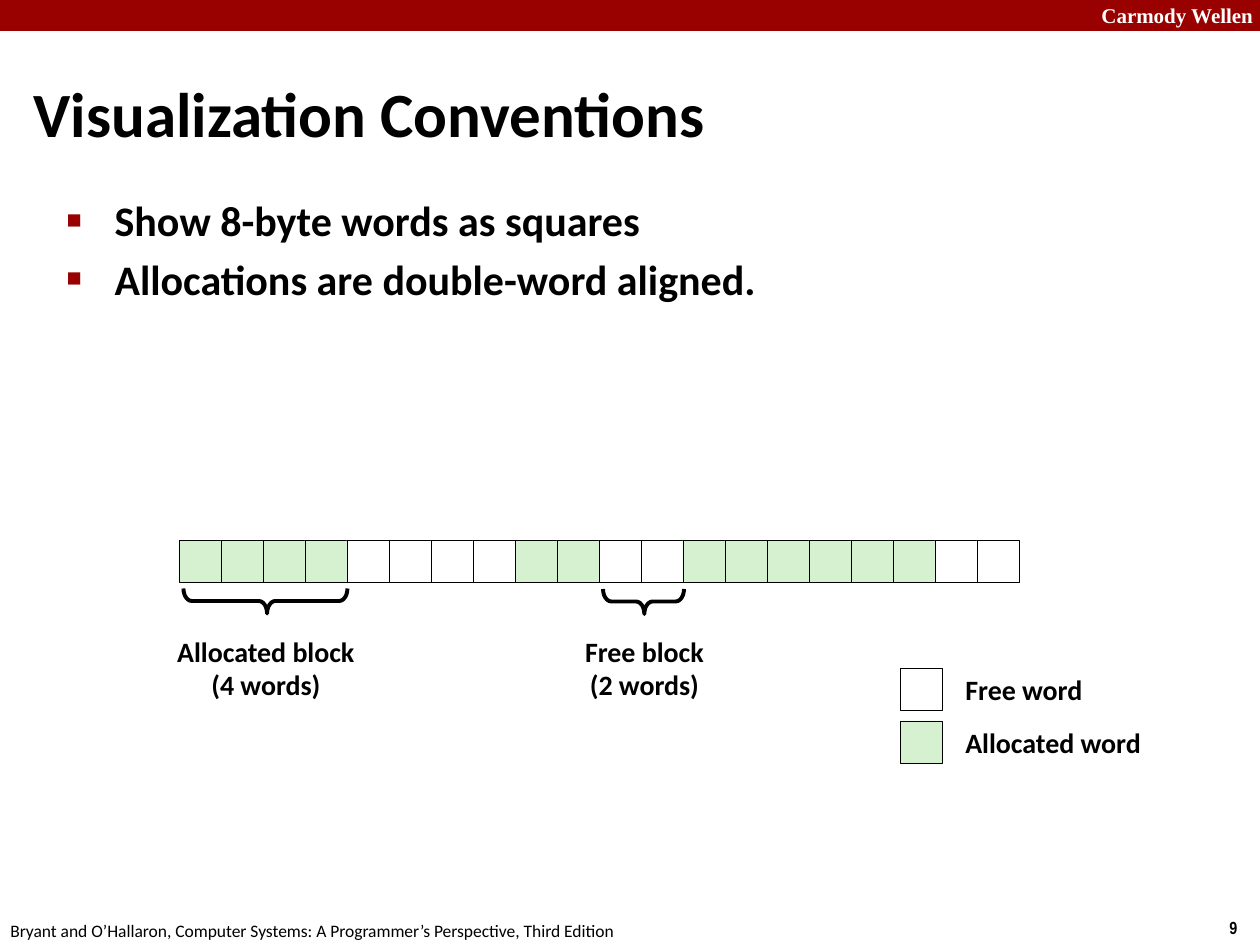
"""Build the slide that explains the drawing conventions for memory blocks."""
from dataclasses import dataclass

from lxml import etree
from pptx import Presentation
from pptx.dml.color import RGBColor
from pptx.enum.shapes import MSO_SHAPE
from pptx.enum.text import MSO_ANCHOR, MSO_AUTO_SIZE, PP_ALIGN
from pptx.oxml.ns import qn
from pptx.shapes.base import BaseShape
from pptx.slide import Slide
from pptx.text.text import TextFrame
from pptx.util import Emu, Inches, Pt

RECTANGLE = MSO_SHAPE.RECTANGLE
LEFT_BRACE = MSO_SHAPE.LEFT_BRACE
MIDDLE = MSO_ANCHOR.MIDDLE
FIXED_SIZE = MSO_AUTO_SIZE.NONE
FIT_TEXT = MSO_AUTO_SIZE.SHAPE_TO_FIT_TEXT
LEFT = PP_ALIGN.LEFT
CENTER = PP_ALIGN.CENTER

BLACK = RGBColor(0x00, 0x00, 0x00)
WHITE = RGBColor(0xFF, 0xFF, 0xFF)
CRIMSON = RGBColor(0x99, 0x00, 0x00)
ALLOCATED = RGBColor(0xD5, 0xF1, 0xCF)
FREE = WHITE

PX_PER_INCH = 126
SLIDE_WIDTH, SLIDE_HEIGHT = 1260, 945
WORD = 42
MEMORY_LEFT, MEMORY_TOP = 179, 540
BRACE_CENTER_Y, BRACE_DEPTH = 601, 25


@dataclass(frozen=True)
class Block:
    words: int
    color: RGBColor


@dataclass(frozen=True)
class Label:
    text: str
    left: int
    top: int
    width: int
    height: int
    size: int = 16
    font: str = "Calibri"
    color: RGBColor = BLACK
    bold: bool = True
    align: PP_ALIGN = LEFT
    wrap: bool = False
    spacing: float = 1.0


@dataclass(frozen=True)
class Brace:
    center_x: int
    length: int


@dataclass(frozen=True)
class LegendEntry:
    text: str
    color: RGBColor
    top: int
    text_width: int


MEMORY = [
    Block(4, ALLOCATED),
    Block(4, FREE),
    Block(2, ALLOCATED),
    Block(2, FREE),
    Block(6, ALLOCATED),
    Block(2, FREE),
]
LABELS = [
    Label("Carmody Wellen", 1089, -4, 180, 38, 12, "Times New Roman", WHITE, wrap=True),
    Label("9", 1217, 911, 43, 34, 10, "Arial Narrow"),
    Label(
        "Bryant and O’Hallaron, Computer Systems: A Programmer’s Perspective, Third Edition",
        -2, 914, 640, 34, 10, bold=False,
    ),
    Label("Allocated block\n(4 words)", 164, 630, 204, 79, align=CENTER, spacing=0.98),
    Label("Free block\n(2 words)", 569, 630, 151, 79, align=CENTER, spacing=0.98),
]
BRACES = [Brace(265, 164), Brace(643, 81)]
LEGEND_LEFT, LEGEND_TEXT_LEFT = 900, 953
LEGEND = [
    LegendEntry("Free word", FREE, 668, 144),
    LegendEntry("Allocated word", ALLOCATED, 721, 203),
]
BULLETS = ["Show 8-byte words as squares", "Allocations are double-word aligned."]


def px(length: int) -> Emu:
    """Turn pixels into EMU."""
    return Inches(length / PX_PER_INCH)


def place(shape: BaseShape, left: int, top: int, width: int, height: int) -> None:
    """Move and size a shape."""
    shape.left, shape.top = px(left), px(top)
    shape.width, shape.height = px(width), px(height)


def format_text(frame: TextFrame, font: str, size: int, color: RGBColor, bold: bool,
                align: PP_ALIGN = LEFT) -> None:
    """Give every run in a frame the same look."""
    for para in frame.paragraphs:
        para.alignment = align
        for span in para.runs:
            span.font.name = font
            span.font.size = Pt(size)
            span.font.bold = bold
            span.font.color.rgb = color


def set_indent(frame: TextFrame, indent: int) -> None:
    """Hang the first line of every paragraph."""
    for para in frame.paragraphs:
        properties = para._p.get_or_add_pPr()
        properties.set("marL", str(px(indent)))
        properties.set("indent", str(-px(indent)))


def set_bullets(frame: TextFrame) -> None:
    """Put a small crimson square before every paragraph."""
    for para in frame.paragraphs:
        properties = para._p.get_or_add_pPr()
        color = etree.SubElement(properties, qn("a:buClr"))
        etree.SubElement(color, qn("a:srgbClr"), val=str(CRIMSON))
        etree.SubElement(properties, qn("a:buSzPct"), val="60000")
        etree.SubElement(properties, qn("a:buChar"), char="■")


def draw_label(page: Slide, label: Label) -> None:
    """Draw a text box."""
    box = page.shapes.add_textbox(
        px(label.left), px(label.top), px(label.width), px(label.height))
    frame = box.text_frame
    frame.text = label.text
    frame.word_wrap = label.wrap
    frame.auto_size = FIT_TEXT
    format_text(frame, label.font, label.size, label.color, label.bold, label.align)
    for para in frame.paragraphs:
        para.line_spacing = label.spacing


def draw_word(page: Slide, left: int, top: int, color: RGBColor) -> None:
    """Draw one memory word as a square."""
    square = page.shapes.add_shape(RECTANGLE, px(left), px(top), px(WORD), px(WORD))
    square.shadow.inherit = False
    square.fill.solid()
    square.fill.fore_color.rgb = color
    square.line.color.rgb = BLACK
    square.line.width = Pt(0.25)


def draw_memory(page: Slide) -> None:
    """Draw the row of memory words block by block."""
    colors = [block.color for block in MEMORY for _ in range(block.words)]
    for index, color in enumerate(colors):
        draw_word(page, MEMORY_LEFT + index * WORD, MEMORY_TOP, color)


def draw_brace(page: Slide, brace: Brace) -> None:
    """Draw a brace that opens upward under a block."""
    shape = page.shapes.add_shape(
        LEFT_BRACE,
        px(brace.center_x - BRACE_DEPTH // 2), px(BRACE_CENTER_Y - brace.length // 2),
        px(BRACE_DEPTH), px(brace.length))
    shape.rotation = 270
    shape.adjustments[0] = 0.33
    shape.adjustments[1] = 0.51
    shape.shadow.inherit = False
    shape.fill.background()
    shape.line.color.rgb = BLACK
    shape.line.width = Pt(2.25)


def draw_banner(page: Slide) -> None:
    """Draw the band along the top edge."""
    banner = page.shapes.add_shape(RECTANGLE, 0, 0, px(SLIDE_WIDTH), px(31))
    banner.shadow.inherit = False
    banner.fill.solid()
    banner.fill.fore_color.rgb = CRIMSON
    banner.line.fill.background()


def fill_placeholders(page: Slide) -> None:
    """Write the title and the bullet list."""
    title, body = page.shapes.title, page.placeholders[1]
    place(title, 21, 60, 1239, 105)
    place(body, 54, 188, 1089, 685)
    title.text_frame.text = "Visualization Conventions"
    title.text_frame.vertical_anchor = MIDDLE
    body.text_frame.text = "\n".join(BULLETS)
    for shape, size, indent in ((title, 36, 16), (body, 24, 48)):
        shape.text_frame.auto_size = FIXED_SIZE
        format_text(shape.text_frame, "Calibri", size, BLACK, True)
        set_indent(shape.text_frame, indent)
    set_bullets(body.text_frame)


def main() -> None:
    """Build and save the deck."""
    deck = Presentation()
    deck.slide_width, deck.slide_height = px(SLIDE_WIDTH), px(SLIDE_HEIGHT)
    page = deck.slides.add_slide(deck.slide_layouts[1])
    draw_banner(page)
    fill_placeholders(page)
    draw_memory(page)
    for label in LABELS:
        draw_label(page, label)
    for entry in LEGEND:
        draw_word(page, LEGEND_LEFT, entry.top, entry.color)
        draw_label(page, Label(entry.text, LEGEND_TEXT_LEFT, entry.top,
                               entry.text_width, 46, spacing=0.98))
    for brace in BRACES:
        draw_brace(page, brace)
    deck.save("out.pptx")


if __name__ == "__main__":
    main()
